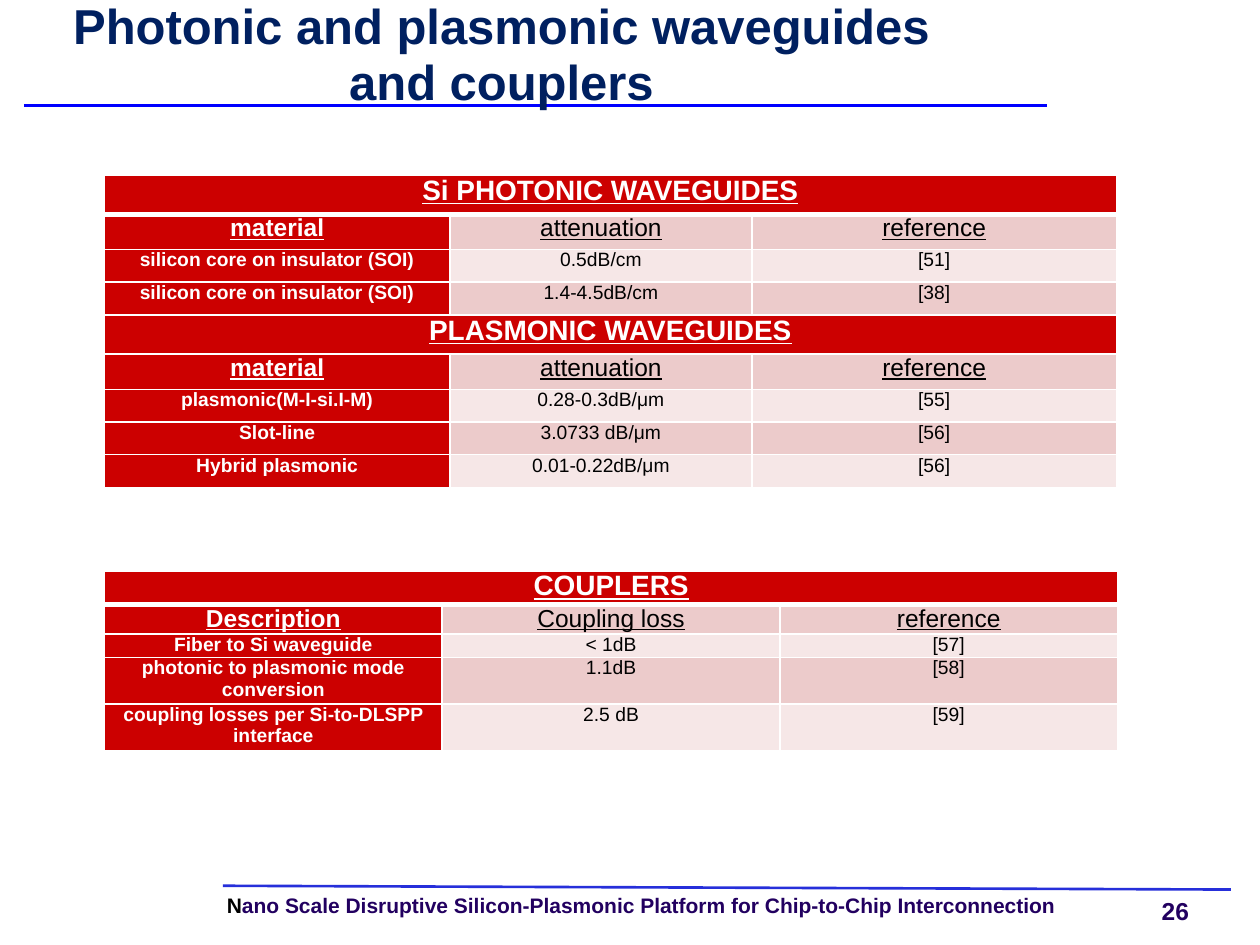
from lxml import etree
from pptx import Presentation
from pptx import util as u
from pptx.dml.color import RGBColor
from pptx.enum import shapes, text
from pptx.oxml import ns

HUES = {"title": "002060", "rule": "0000FF", "foot": "262FDA", "note": "220060",
        "red": "CC0000", "dark": "ECCBCB", "light": "F6E7E7",
        "white": "FFFFFF", "black": "000000"}


def rgb(name):
    return RGBColor.from_string(HUES[name])


def write(para, words, size=11, hue="black", bold=False, line=False,
          align=None, after=None, space=None):
    """Add a run to a paragraph and format both."""
    run = para.add_run()
    run.text = words
    font = run.font
    font.name, font.size, font.bold = "Arial", u.Pt(size), bold
    font.underline = line
    font.color.rgb = rgb(hue)
    if align is not None:
        para.alignment = align
    if after is not None:
        para.space_after = u.Pt(after)
    if space is not None:
        para.line_spacing = space


def edge(cell, sides):
    """Draw white cell borders; sides maps L, R, T, B to points."""
    props = cell._tc.get_or_add_tcPr()
    for side, width in sides.items():
        line = etree.SubElement(props, ns.qn("a:ln" + side), w=str(u.Pt(width)))
        fill = etree.SubElement(line, ns.qn("a:solidFill"))
        etree.SubElement(fill, ns.qn("a:srgbClr"), val=HUES["white"])


class Deck:
    mid = text.PP_ALIGN.CENTER

    def __init__(self, show):
        self.page = show.slides.add_slide(show.slide_layouts[6])

    def box(self, left, top, width, height, wrap=True, anchor=text.MSO_ANCHOR.TOP):
        """Add a text box without margins and return its first paragraph."""
        shape = self.page.shapes.add_textbox(*map(u.Inches, (left, top, width, height)))
        frame = shape.text_frame
        frame.word_wrap, frame.vertical_anchor = wrap, anchor
        frame.margin_left = frame.margin_right = 0
        frame.margin_top = frame.margin_bottom = 0
        return frame.paragraphs[0]

    def rule(self, x1, y1, x2, y2, hue):
        line = self.page.shapes.add_connector(
            shapes.MSO_CONNECTOR.STRAIGHT, *map(u.Inches, (x1, y1, x2, y2)))
        line.line.color.rgb = rgb(hue)
        line.line.width = u.Pt(1.5)
        etree.SubElement(line._element.spPr, ns.qn("a:effectLst"))

    def grid(self, top, cols, highs, rows):
        """Add a table; a row with one entry is a band across all columns."""
        table = self.page.shapes.add_table(
            len(rows), len(cols), u.Inches(0.83), u.Inches(top),
            u.Inches(sum(cols)), u.Inches(sum(highs))).table
        for col, width in zip(table.columns, cols):
            col.width = u.Inches(width)
        for i, (row, high) in enumerate(zip(rows, highs)):
            table.rows[i].height = u.Inches(high)
            band = len(row) == 1
            head = not band and len(rows[i - 1]) == 1
            if band:
                table.cell(i, 0).merge(table.cell(i, len(cols) - 1))
            for j in range(len(cols)):
                cell = table.cell(i, j)
                edge(cell, {"L": 1, "R": 1, "T": 3 if i == 1 else 1,
                            "B": 3 if i == 0 else 1})
                key = band or j == 0
                cell.fill.solid()
                cell.fill.fore_color.rgb = rgb(
                    "red" if key else "dark" if i % 2 else "light")
                cell.margin_left = cell.margin_right = u.Inches(0.07)
                cell.margin_top = cell.margin_bottom = 0
                if j < len(row):
                    write(cell.text_frame.paragraphs[0], row[j],
                          size=16 if band else 14 if head else 11,
                          hue="white" if key else "black", bold=key,
                          line=band or head, align=self.mid,
                          after=0 if band else 6)


def main():
    show = Presentation()
    show.slide_width, show.slide_height = u.Inches(10), u.Inches(7.5)
    deck = Deck(show)

    # Footer and page number
    foot = deck.box(1.8, 7.11, 7.14, 0.18)
    write(foot, "N", size=12, bold=True, space=0.9)
    write(foot, "ano Scale Disruptive Silicon-Plasmonic Platform for "
          "Chip-to-Chip Interconnection", size=12, hue="note", bold=True)
    write(deck.box(9.22, 7.11, 0.24, 0.23, wrap=False), "26",
          size=14, hue="note", bold=True)
    deck.rule(1.77, 7.03, 9.77, 7.06, "foot")

    # Title
    deck.rule(0.19, 0.84, 8.31, 0.84, "rule")
    write(deck.box(0.2, 0, 7.56, 0.87, anchor=text.MSO_ANCHOR.MIDDLE),
          "Photonic and plasmonic waveguides and couplers",
          size=28, hue="title", bold=True, align=deck.mid, space=u.Pt(32))

    # Waveguides
    head = ["material", "attenuation", "reference"]
    deck.grid(1.39, [2.74, 2.4, 2.89],
              [0.31, 0.28, 0.26, 0.26, 0.31, 0.28, 0.26, 0.26, 0.26], [
        ["Si PHOTONIC WAVEGUIDES"],
        head,
        ["silicon core on insulator (SOI)", "0.5dB/cm", "[51]"],
        ["silicon core on insulator (SOI)", "1.4-4.5dB/cm", "[38]"],
        ["PLASMONIC WAVEGUIDES"],
        head,
        ["plasmonic(M-I-si.I-M)", "0.28-0.3dB/μm", "[55]"],
        ["Slot-line", "3.0733 dB/μm", "[56]"],
        ["Hybrid plasmonic", "0.01-0.22dB/μm", "[56]"],
    ])

    # Couplers
    deck.grid(4.53, [2.68] * 3, [0.27, 0.23, 0.18, 0.37, 0.37], [
        ["COUPLERS"],
        ["Description", "Coupling loss", "reference"],
        ["Fiber to Si waveguide", "< 1dB", "[57]"],
        ["photonic to plasmonic mode conversion", "1.1dB", "[58]"],
        ["coupling losses per Si-to-DLSPP interface", "2.5 dB", "[59]"],
    ])

    show.save("out.pptx")


if __name__ == "__main__":
    main()
